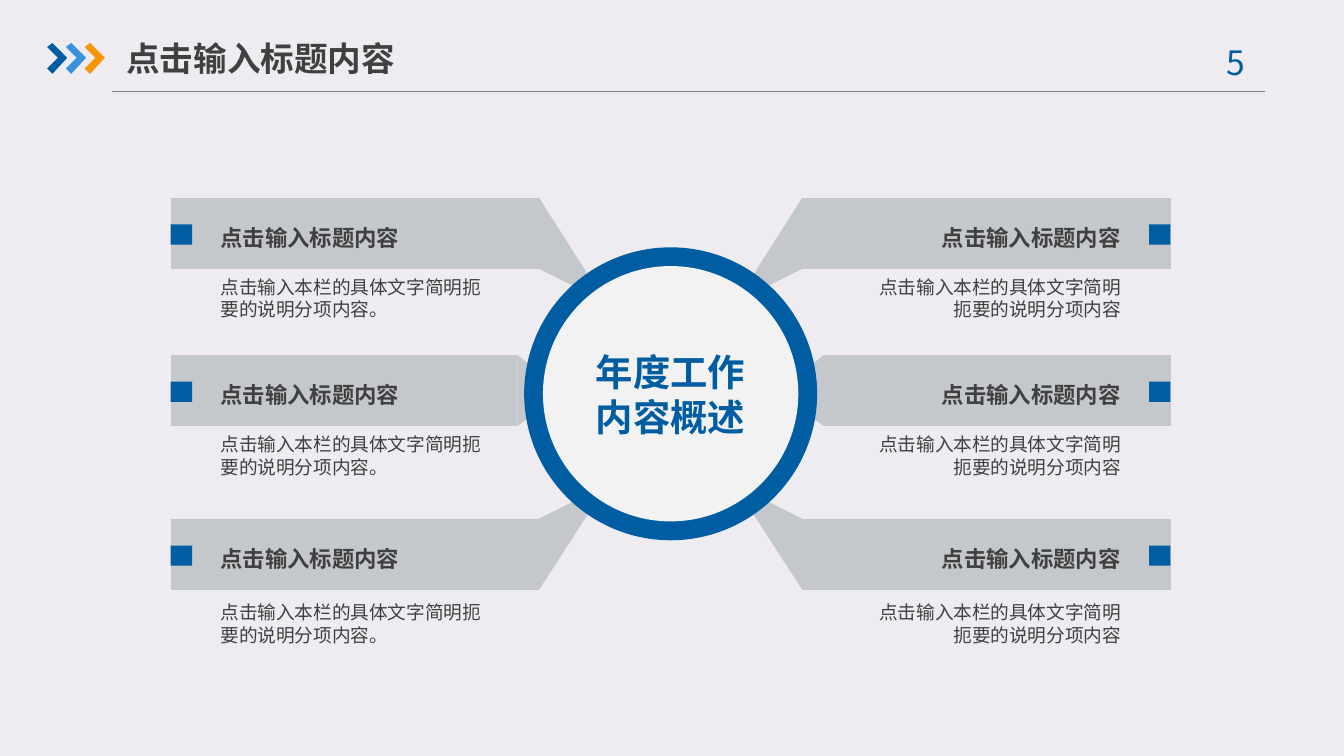
"""Build a hub slide: a central ring with three titled bars on each side."""
from lxml import etree
from pptx import Presentation
from pptx import util as u
from pptx.dml.color import RGBColor
from pptx.enum import shapes, text
from pptx.oxml.ns import qn

HEADING = "点击输入标题内容"
HUB = ["年度工作", "内容概述"]
BODY = {"left": "点击输入本栏的具体文字简明扼要的说明分项内容。",
        "right": "点击输入本栏的具体文字简明扼要的说明分项内容"}
ROWS = [
    {"top": 1.47, "inner": 4.01, "tip": [(4.43, 2.13), (4.37, 2.18)], "body": 0.75},
    {"top": 2.64, "inner": 3.85, "tip": [(4.13, 2.87), (4.13, 2.97)], "body": 0.75},
    {"top": 3.86, "inner": 4.01, "tip": [(4.37, 3.68), (4.43, 3.74)], "body": 0.78},
]
COLORS = {"bg": "EEECF1", "blue": "005DA2", "sky": "3992DB", "orange": "F79600",
          "bar": "C4C7CB", "rule": "808080", "ink": "404040", "hub": "F2F2F2"}
FONT = "Noto Sans CJK SC"
WIDTH = 10
HEIGHT = WIDTH * 9 / 16
CX, CY = 4.99, 2.93
BAR_LEFT, BAR_H = 1.27, 0.53
TEXT_LEFT = 1.64
MARK_W, MARK_H = 0.16, 0.15
CHEVRON = [(0, 0.03), (0.04, 0), (0.15, 0.11), (0.04, 0.23), (0, 0.19), (0.08, 0.11)]
LEFT, CENTER, RIGHT = text.PP_ALIGN.LEFT, text.PP_ALIGN.CENTER, text.PP_ALIGN.RIGHT
TOP, MIDDLE = text.MSO_ANCHOR.TOP, text.MSO_ANCHOR.MIDDLE


def color(name):
    return RGBColor.from_string(COLORS[name])


def paint(sp, fill):
    sp.shadow.inherit = False
    sp.fill.solid()
    sp.fill.fore_color.rgb = color(fill)
    sp.line.fill.background()
    return sp


def polygon(s, points, fill):
    pts = [(u.Inches(x), u.Inches(y)) for x, y in points]
    builder = s.shapes.build_freeform(*pts[0], scale=1.0)
    builder.add_line_segments(pts[1:], close=True)
    return paint(builder.convert_to_shape(), fill)


def preset(s, kind, box, fill):
    return paint(s.shapes.add_shape(kind, *map(u.Inches, box)), fill)


def disc(s, radius, fill):
    box = (CX - radius, CY - radius, 2 * radius, 2 * radius)
    return preset(s, shapes.MSO_SHAPE.OVAL, box, fill)


def write(sp, lines, size, ink="ink", bold=False, align=LEFT, anchor=TOP, inset=0.0):
    tf = sp.text_frame
    frame = {"word_wrap": True, "auto_size": text.MSO_AUTO_SIZE.NONE, "vertical_anchor": anchor,
             "margin_left": u.Inches(inset), "margin_right": u.Inches(inset),
             "margin_top": u.Inches(0.05), "margin_bottom": u.Inches(0.05)}
    for key, value in frame.items():
        setattr(tf, key, value)
    for i, line in enumerate(lines):
        p = tf.add_paragraph() if i else tf.paragraphs[0]
        p.alignment = align
        r = p.add_run()
        r.text = line
        for key, value in {"name": FONT, "size": u.Pt(size), "bold": bold}.items():
            setattr(r.font, key, value)
        r.font.color.rgb = color(ink)
        etree.SubElement(r.font._element, qn("a:ea"), typeface=FONT)


def label(s, box, *args, **kwargs):
    write(s.shapes.add_textbox(*map(u.Inches, box)), *args, **kwargs)


def header(s):
    title = s.shapes.title
    box = zip(("left", "top", "width", "height"), (0.94, 0.22, 2.33, 0.42))
    for key, value in box:
        setattr(title, key, u.Inches(value))
    write(title, [HEADING], 18, bold=True, anchor=MIDDLE)
    rule = s.shapes.add_connector(shapes.MSO_CONNECTOR.STRAIGHT,
                                  *map(u.Inches, (0.83, 0.68, 9.41, 0.68)))
    rule.line.color.rgb = color("rule")
    rule.line.width = u.Pt(0.75)
    etree.SubElement(rule._element.spPr, qn("a:effectLst"))
    for i, fill in enumerate(("blue", "sky", "orange")):
        polygon(s, [(0.35 + 0.14 * i + x, 0.32 + y) for x, y in CHEVRON], fill)
    label(s, (8.83, 0.26, 0.73, 0.4), ["5"], 18, ink="blue", align=CENTER, inset=0.1)


def branch(s, row, side):
    mirrored = side == "right"
    align = RIGHT if mirrored else LEFT
    top, bottom, inner = row["top"], row["top"] + BAR_H, row["inner"]

    def flip(points):
        return [(2 * CX - x, y) if mirrored else (x, y) for x, y in points]

    def place(left, y, w, h):
        return (2 * CX - left - w if mirrored else left, y, w, h)

    bar = [(BAR_LEFT, top), (inner, top), (inner, bottom), (BAR_LEFT, bottom)]
    fan = [(inner, top), *row["tip"], (inner, bottom)]
    for points in (bar, fan):
        polygon(s, flip(points), "bar")
    preset(s, shapes.MSO_SHAPE.RECTANGLE, place(BAR_LEFT, top + 0.2, MARK_W, MARK_H), "blue")
    label(s, place(TEXT_LEFT, top + 0.15, 2.14, 0.31), [HEADING], 12, bold=True, align=align)
    body_w = 1.84 if mirrored else 1.95
    label(s, place(TEXT_LEFT, top + row["body"] - 0.07, body_w, 0.14), [BODY[side]], 10,
          align=align, anchor=MIDDLE)


def main():
    prs = Presentation()
    prs.slide_width, prs.slide_height = u.Inches(WIDTH), u.Inches(HEIGHT)
    s = prs.slides.add_slide(prs.slide_layouts[5])
    s.background.fill.solid()
    s.background.fill.fore_color.rgb = color("bg")
    header(s)
    for row in ROWS:
        for side in BODY:
            branch(s, row, side)
    disc(s, 1.09, "blue")
    write(disc(s, 0.95, "hub"), HUB, 20, ink="blue", bold=True, align=CENTER,
          anchor=MIDDLE, inset=0.1)
    prs.save("out.pptx")


if __name__ == "__main__":
    main()
